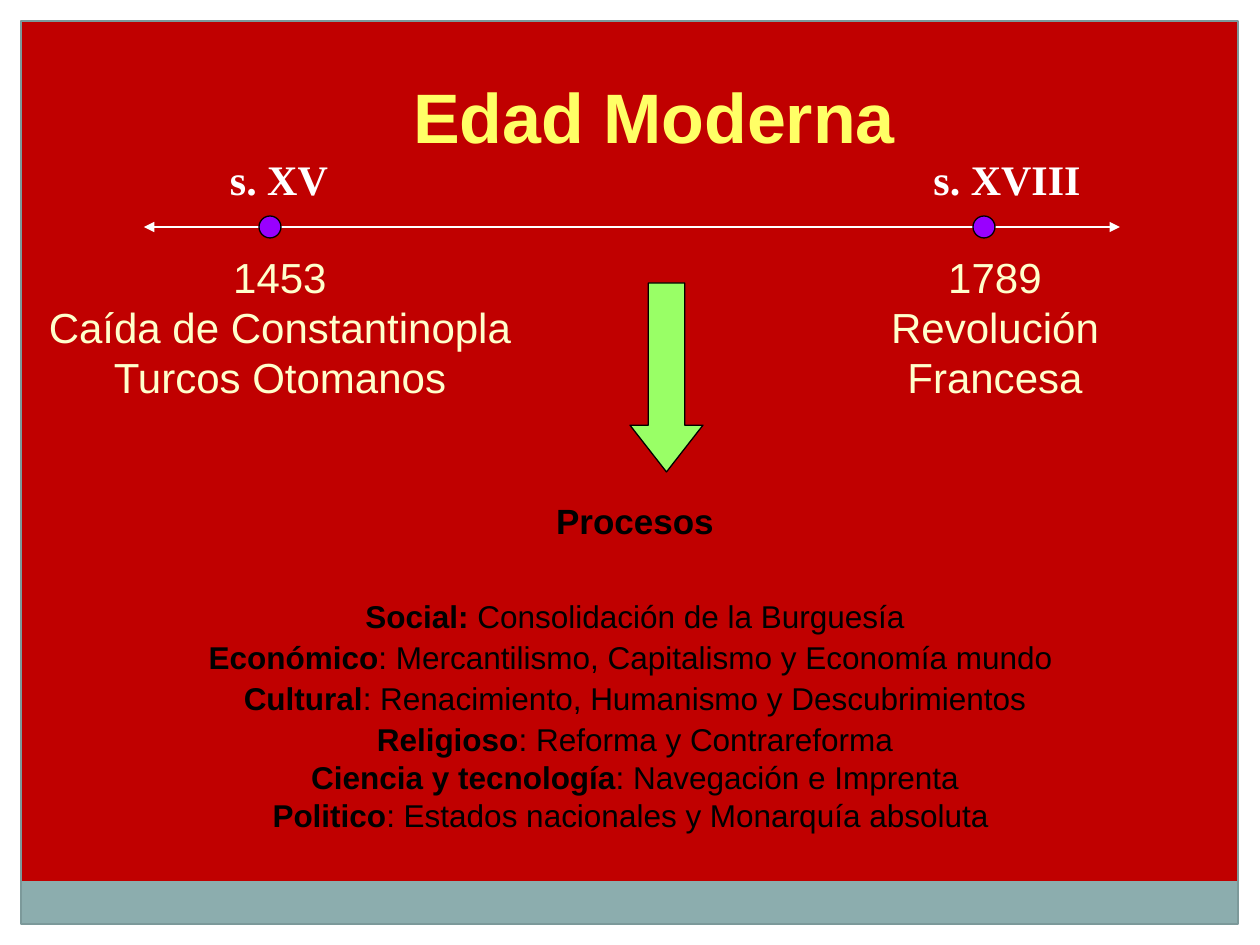
"""Build the Edad Moderna timeline slide."""
from lxml.etree import SubElement
from pptx import Presentation
from pptx.dml.color import RGBColor
from pptx.enum.shapes import MSO_CONNECTOR, MSO_SHAPE
from pptx.enum.text import MSO_ANCHOR, MSO_AUTO_SIZE, PP_ALIGN
from pptx.oxml.ns import qn
from pptx.util import Emu, Inches, Pt

SCALE = 914400 / 126
COLORS = {
    "red": "C00000", "white": "FFFFFF", "band": "8CADAE", "frame": "7C999A",
    "title": "FFFF66", "cream": "FFFFCC", "dot": "9900FF", "arrow": "99FF66",
    "black": "000000",
}


def add_shape(kind, box, fill=None, line=None):
    sp = slide.shapes.add_shape(kind, *[Emu(round(v * SCALE)) for v in box])
    sp.shadow.inherit = False
    if fill:
        sp.fill.solid()
        sp.fill.fore_color.rgb = RGBColor.from_string(COLORS[fill])
    else:
        sp.fill.background()
    if line:
        sp.line.color.rgb = RGBColor.from_string(COLORS[line])
        sp.line.width = Pt(0.75)
    else:
        sp.line.fill.background()
    return sp


def fill_text(sp, box, lines, color, font="Arial"):
    sp.left, sp.top, sp.width, sp.height = [Emu(round(v * SCALE)) for v in box]
    tf = sp.text_frame
    tf.word_wrap = True
    tf.auto_size = MSO_AUTO_SIZE.NONE
    tf.vertical_anchor = MSO_ANCHOR.TOP
    tf.margin_left = tf.margin_top = tf.margin_right = tf.margin_bottom = 0
    for i, (runs, size, spacing, before) in enumerate(lines):
        p = tf.paragraphs[0] if i == 0 else tf.add_paragraph()
        p.alignment = PP_ALIGN.CENTER
        p.line_spacing = spacing
        p.space_before = Pt(before)
        pPr = p._p.get_or_add_pPr()
        pPr.set("marL", "0")
        pPr.set("indent", "0")
        SubElement(pPr, qn("a:buNone"))
        for text, bold in runs:
            r = p.add_run()
            r.text = text
            r.font.name = font
            r.font.size = Pt(size)
            r.font.bold = bold
            r.font.color.rgb = RGBColor.from_string(COLORS[color])


prs = Presentation()
prs.slide_width, prs.slide_height = Inches(10), Inches(7.5)
slide = prs.slides.add_slide(prs.slide_layouts[1])
slide.background.fill.solid()
slide.background.fill.fore_color.rgb = RGBColor.from_string(COLORS["red"])

for box in [(0, 924, 1260, 21), (0, 0, 1260, 21), (1239, 0, 21, 945), (0, 0, 21, 945)]:
    add_shape(MSO_SHAPE.RECTANGLE, box, "white")
add_shape(MSO_SHAPE.RECTANGLE, (21, 881, 1217, 43), "band")
add_shape(MSO_SHAPE.RECTANGLE, (21, 21, 1217, 903), line="frame")

fill_text(slide.shapes.title, (254, 73, 800, 82),
          [([("Edad Moderna", True)], 40, 1.0, 0)], "title")

axis = slide.shapes.add_connector(
    MSO_CONNECTOR.STRAIGHT, *[Emu(round(v * SCALE)) for v in (144, 227, 1120, 227)])
axis.line.color.rgb = RGBColor.from_string(COLORS["white"])
axis.line.width = Pt(0.75)
for end in ("a:headEnd", "a:tailEnd"):
    SubElement(axis.line._get_or_add_ln(), qn(end), type="triangle")
SubElement(axis._element.spPr, qn("a:effectLst"))

milestones = [
    (270, 279, "s. XV", 280, ["1453", "Caída de Constantinopla", "Turcos Otomanos"]),
    (984, 1007, "s. XVIII", 995, ["1789", "Revolución", "Francesa"]),
]
for dot_x, century_x, century, event_x, event in milestones:
    add_shape(MSO_SHAPE.FLOWCHART_CONNECTOR, (dot_x - 11, 216, 22, 22), "dot", "black")
    fill_text(slide.shapes.add_textbox(0, 0, 0, 0), (century_x - 100, 154, 200, 50),
              [([(century, True)], 24, 1.0, 0)], "white", "Times New Roman")
    fill_text(slide.shapes.add_textbox(0, 0, 0, 0), (event_x - 240, 252, 480, 150),
              [([(text, False)], 24, Pt(28.6), 0) for text in event], "cream")

arrow = add_shape(MSO_SHAPE.DOWN_ARROW, (630, 283, 73, 189), "arrow", "black")
arrow.adjustments[0] = 0.5
arrow.adjustments[1] = 0.64

processes = [
    ("Social: ", "Consolidación de la Burguesía", 32),
    ("Económico", ": Mercantilismo, Capitalismo y Economía mundo ", 1.7),
    ("Cultural", ": Renacimiento, Humanismo y Descubrimientos", 1.7),
    ("Religioso", ": Reforma y Contrareforma", 1.7),
    ("Ciencia y tecnología", ": Navegación e Imprenta", 0),
    ("Politico", ": Estados nacionales y Monarquía absoluta ", 0),
]
lines = [([("Procesos", True)], 20, Pt(24), 0)]
for name, detail, before in processes:
    lines.append(([(name, True), (detail, False)], 18, Pt(21.7), before))
fill_text(slide.placeholders[1], (44, 499, 1182, 360), lines, "black")

prs.save("out.pptx")
